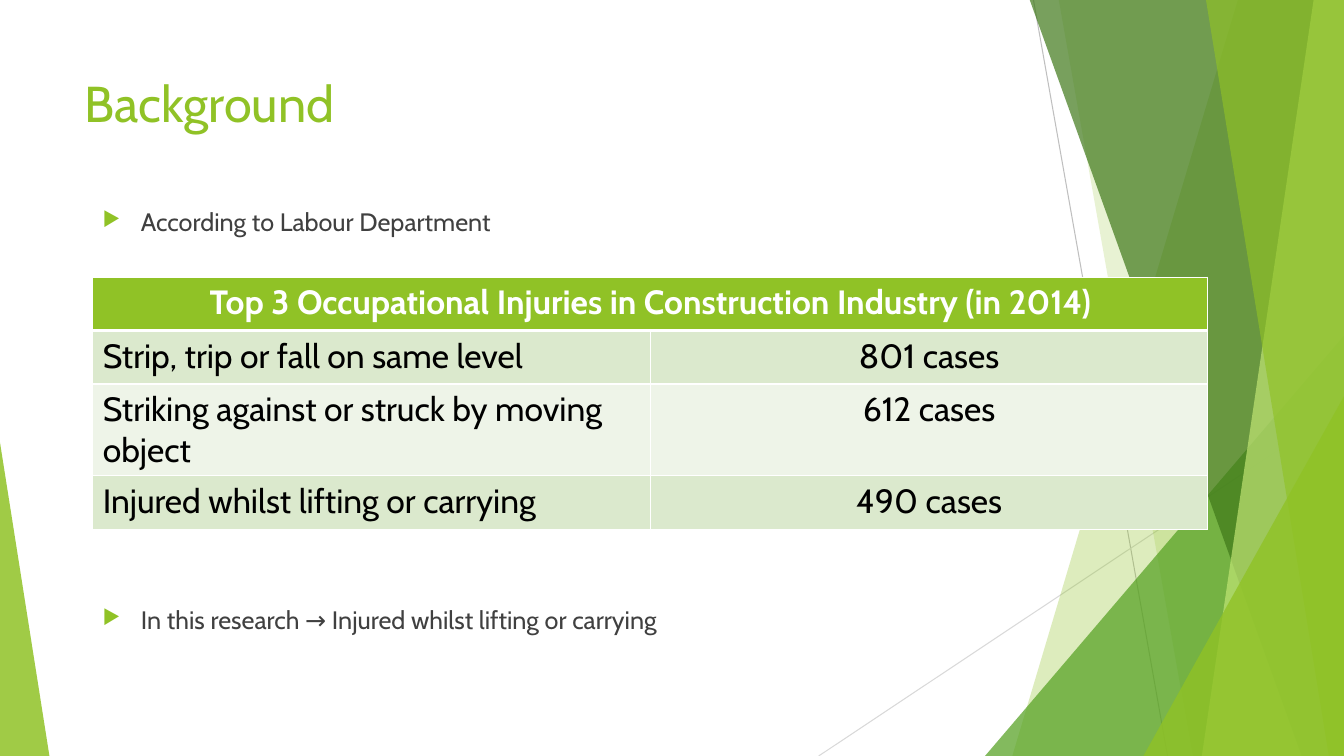
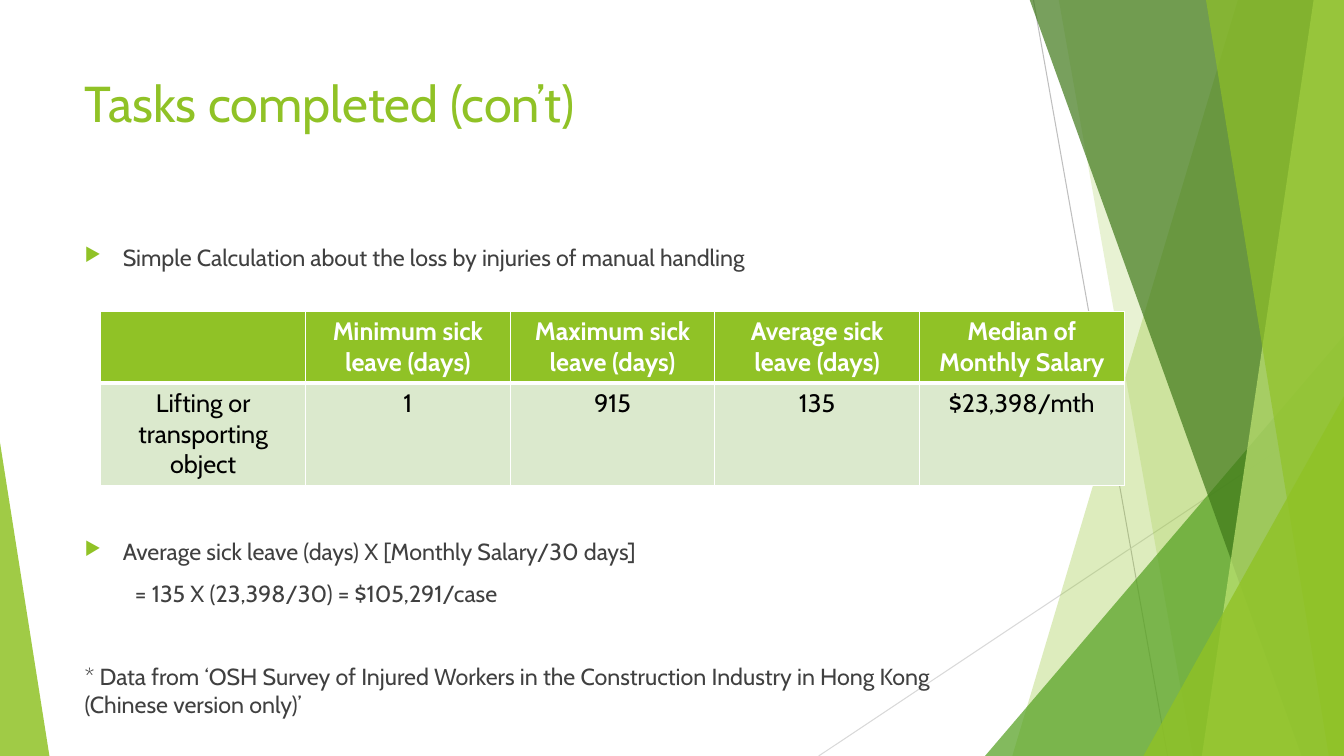
from dataclasses import dataclass

from lxml import etree
from pptx import Presentation
from pptx import util as u
from pptx.dml.color import RGBColor
from pptx.enum import shapes, text
from pptx.oxml import ns

PX = 9144
WIDTH, HEIGHT = 1333, 750
FONT = "Cabin"
LIME, WHITE, BLACK, GREY = "90C226", "FFFFFF", "000000", "404040"
STRIPES = ("DBE9CD", "EEF4E8")
LEFT, CENTER = text.PP_ALIGN.LEFT, text.PP_ALIGN.CENTER


@dataclass
class Thread:
    start: tuple[int, int]
    end: tuple[int, int]
    color: str


@dataclass
class Band:
    top_x: int
    bottom_x: int
    color: str
    opacity: int


@dataclass
class Peak:
    left: int
    top: int
    width: int
    tip: int
    color: str
    opacity: int


@dataclass
class Line:
    words: str
    bullet: bool = False
    margin: int = 0


@dataclass
class Note:
    left: int
    top: int
    width: int
    height: int
    size: float
    lines: list[Line]
    color: str = GREY


@dataclass
class Grid:
    left: int
    top: int
    column_width: int
    row_heights: list[int]
    size: int
    rows: list[list[str]]
    first_align: text.PP_ALIGN = CENTER
    merge_header: bool = False


THREADS = [
    Thread((1025, 0), (1158, HEIGHT), "BFBFBF"),
    Thread((WIDTH, 403), (812, HEIGHT), "D9D9D9"),
]
FACETS = [
    Band(1228, 1004, LIME, 30),
    Band(1050, 1183, LIME, 20),
    Peak(977, 333, 356, 1, "54A021", 72),
    Band(1021, 1291, "3F7819", 70),
    Band(1303, 1192, "C0E474", 70),
    Band(1196, 1318, LIME, 65),
    Peak(1134, 393, 199, 1, LIME, 80),
    Peak(0, 439, 49, 0, LIME, 85),
]


def px(length: int) -> u.Emu:
    return u.Emu(length * PX)


def rgb(color: str) -> RGBColor:
    return RGBColor.from_string(color)


def add_child(parent, tag: str, **attributes: str):
    return etree.SubElement(parent, ns.qn(tag), attributes)


def draw_thread(page, thread: Thread) -> None:
    ends = [px(value) for value in (*thread.start, *thread.end)]
    line = page.shapes.add_connector(shapes.MSO_CONNECTOR.STRAIGHT, *ends)
    line.line.color.rgb = rgb(thread.color)
    line.line.width = u.Pt(0.75)
    add_child(line._element.spPr, "a:effectLst")


def draw_facet(page, facet: Band | Peak) -> None:
    if isinstance(facet, Band):
        builder = page.shapes.build_freeform(px(facet.top_x), px(-1))
        corners = [(WIDTH, -1), (WIDTH, HEIGHT), (facet.bottom_x, HEIGHT)]
        builder.add_line_segments([(px(x), px(y)) for x, y in corners])
        shape = builder.convert_to_shape()
    else:
        shape = page.shapes.add_shape(
            shapes.MSO_SHAPE.ISOSCELES_TRIANGLE,
            px(facet.left), px(facet.top), px(facet.width), px(HEIGHT - facet.top),
        )
        shape.adjustments[0] = facet.tip
    shape.shadow.inherit = False
    shape.line.fill.background()
    shape.fill.solid()
    shape.fill.fore_color.rgb = rgb(facet.color)
    fill = shape._element.spPr.find(ns.qn("a:solidFill"))
    add_child(fill[0], "a:alpha", val=str(facet.opacity * 1000))


def format_runs(para, size: float, color: str, bold: bool = False) -> None:
    for span in para.runs:
        span.font.name = FONT
        span.font.size = u.Pt(size)
        span.font.bold = bold
        span.font.color.rgb = rgb(color)


def add_bullet(para) -> None:
    properties = para._p.get_or_add_pPr()
    properties.set("marL", str(px(38)))
    properties.set("indent", str(px(-38)))
    add_child(add_child(properties, "a:buClr"), "a:srgbClr", val=LIME)
    add_child(properties, "a:buSzPct", val="80000")
    add_child(properties, "a:buChar", char="▶")


def draw_note(page, note: Note) -> None:
    box = page.shapes.add_textbox(
        px(note.left), px(note.top), px(note.width), px(note.height)
    )
    frame = box.text_frame
    frame.word_wrap = True
    frame.text = "\n".join(line.words for line in note.lines)
    for index, (para, line) in enumerate(zip(frame.paragraphs, note.lines)):
        format_runs(para, note.size, note.color)
        if index:
            para.space_before = u.Pt(10)
        if line.bullet:
            add_bullet(para)
        elif line.margin:
            para._p.get_or_add_pPr().set("marL", str(px(line.margin)))


def add_borders(cell, bottom: int) -> None:
    properties = cell._tc.get_or_add_tcPr()
    sides = {"a:lnL": 1, "a:lnR": 1, "a:lnT": 1, "a:lnB": bottom}
    for index, (tag, points) in enumerate(sides.items()):
        border = add_child(properties, tag, w=str(u.Pt(points)))
        add_child(add_child(border, "a:solidFill"), "a:srgbClr", val=WHITE)
        properties.insert(index, border)


def draw_grid(page, grid: Grid) -> None:
    columns = len(grid.rows[0])
    table = page.shapes.add_table(
        len(grid.rows), columns, px(grid.left), px(grid.top),
        px(columns * grid.column_width), px(sum(grid.row_heights)),
    ).table
    for column in table.columns:
        column.width = px(grid.column_width)
    for y, words in enumerate(grid.rows):
        table.rows[y].height = px(grid.row_heights[y])
        header = y == 0
        for x, word in enumerate(words):
            cell = table.cell(y, x)
            cell.text_frame.text = word
            para = cell.text_frame.paragraphs[0]
            para.alignment = CENTER if header or x else grid.first_align
            format_runs(para, grid.size, WHITE if header else BLACK, header)
            cell.fill.solid()
            cell.fill.fore_color.rgb = rgb(LIME if header else STRIPES[(y - 1) % 2])
            add_borders(cell, 3 if header else 1)
    if grid.merge_header:
        table.cell(0, 0).merge(table.cell(0, columns - 1))


def draw_page(deck, title: str, notes: list[Note], grid: Grid) -> None:
    page = deck.slides.add_slide(deck.slide_layouts[6])
    for thread in THREADS:
        draw_thread(page, thread)
    for facet in FACETS:
        draw_facet(page, facet)
    draw_note(page, Note(74, 67, 940, 144, 36, [Line(title)], LIME))
    for note in notes:
        draw_note(page, note)
    draw_grid(page, grid)


def main() -> None:
    deck = Presentation()
    deck.slide_width, deck.slide_height = px(WIDTH), px(HEIGHT)
    draw_page(
        deck,
        "Background",
        [
            Note(92, 200, 1150, 40, 18, [Line("According to Labour Department", True)]),
            Note(92, 595, 1150, 40, 18, [
                Line("In this research → Injured whilst lifting or carrying", True),
            ]),
        ],
        Grid(92, 275, 553, [53, 53, 91, 53], 24, [
            ["Top 3 Occupational Injuries in Construction Industry (in 2014)", ""],
            ["Strip, trip or fall on same level", "801 cases"],
            ["Striking against or struck by moving object", "612 cases"],
            ["Injured whilst lifting or carrying", "490 cases"],
        ], LEFT, True),
    )
    draw_page(
        deck,
        "Tasks completed (con’t)",
        [
            Note(74, 236, 940, 38, 16.6, [
                Line("Simple Calculation about the loss by injuries of manual handling", True),
            ]),
            Note(74, 528, 940, 80, 16.6, [
                Line("Average sick leave (days) X [Monthly Salary/30 days]", True),
                Line("= 135 X (23,398/30) = $105,291/case", margin=50),
            ]),
            Note(74, 652, 940, 66, 16.6, [
                Line("* Data from ‘OSH Survey of Injured Workers in the Construction "
                     "Industry in Hong Kong (Chinese version only)’"),
            ]),
        ],
        Grid(100, 309, 203, [71, 102], 18, [
            ["", "Minimum sick leave (days)", "Maximum sick leave (days)",
             "Average sick leave (days)", "Median of Monthly Salary"],
            ["Lifting or transporting object", "1", "915", "135", "$23,398/mth"],
        ]),
    )
    deck.save("out.pptx")


if __name__ == "__main__":
    main()
